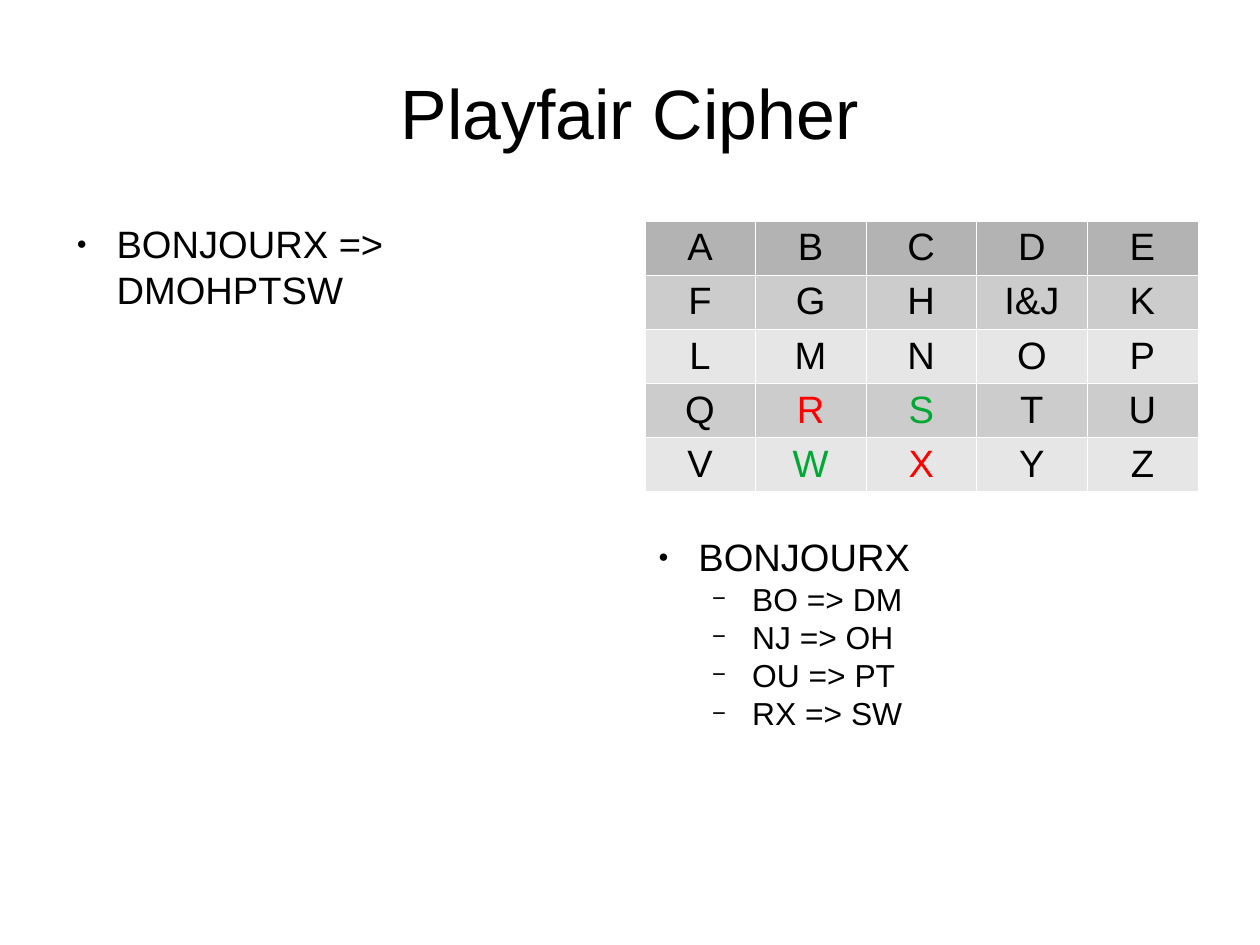
from dataclasses import dataclass

from lxml.etree import SubElement
from pptx import Presentation
from pptx.dml.color import RGBColor
from pptx.enum.text import MSO_ANCHOR as Anchor, MSO_AUTO_SIZE as AutoSize, PP_ALIGN as Align
from pptx.oxml.ns import qn
from pptx.util import Inches, Pt

FONT = "Arial"
BLACK, WHITE, RED, GREEN = "000000", "FFFFFF", "FF0000", "00A933"
HEADER_FILL, ODD_FILL, EVEN_FILL = "B3B3B3", "CCCCCC", "E6E6E6"
# The page is 28 by 21 centimetres
PAGE_WIDTH, PAGE_HEIGHT = 28 / 2.54, 21 / 2.54
LEFT, RIGHT, TOP, COLUMN_WIDTH = 0.55, 5.64, 1.93, 4.84
TABLE_HEIGHT, BORDER_WIDTH = 2.37, 0.06

KEY_SQUARE = [
    ["A", "B", "C", "D", "E"],
    ["F", "G", "H", "I&J", "K"],
    ["L", "M", "N", "O", "P"],
    ["Q", "R", "S", "T", "U"],
    ["V", "W", "X", "Y", "Z"],
]
LETTER_COLORS = {"R": RED, "X": RED, "S": GREEN, "W": GREEN}


@dataclass(frozen=True)
class Level:
    size: float
    margin: float
    space_before: float
    bullet: str
    bullet_percent: int


@dataclass(frozen=True)
class Item:
    text: str
    level: int = 0


LEVELS = [Level(24, 0.47, 14.2, "●", 45), Level(20, 0.94, 0, "−", 75)]


def color(value: str) -> RGBColor:
    return RGBColor.from_string(value)


def style(para, size: float, text_color: str = BLACK) -> None:
    para.font.name = FONT
    para.font.size = Pt(size)
    para.font.color.rgb = color(text_color)


def place(box, left: float, top: float, width: float, height: float) -> None:
    box.left, box.top = Inches(left), Inches(top)
    box.width, box.height = Inches(width), Inches(height)
    frame = box.text_frame
    frame.margin_left = frame.margin_right = frame.margin_top = frame.margin_bottom = 0
    frame.word_wrap = True
    frame.auto_size = AutoSize.NONE


def add_bullet(para, level: Level) -> None:
    props = para._p.get_or_add_pPr()
    props.set("marL", str(Inches(level.margin)))
    props.set("indent", str(Inches(-0.35)))
    bullet_color = SubElement(props, qn("a:buClr"))
    SubElement(bullet_color, qn("a:srgbClr"), val=BLACK)
    SubElement(props, qn("a:buSzPct"), val=str(level.bullet_percent * 1000))
    SubElement(props, qn("a:buFont"), typeface=FONT)
    SubElement(props, qn("a:buChar"), char=level.bullet)


def fill_list(box, items: list[Item]) -> None:
    frame = box.text_frame
    frame.vertical_anchor = Anchor.TOP
    for index, item in enumerate(items):
        para = frame.add_paragraph() if index else frame.paragraphs[0]
        level = LEVELS[item.level]
        para.text, para.level = item.text, item.level
        para.line_spacing = 1.0
        para.space_before = Pt(level.space_before)
        add_bullet(para, level)
        style(para, level.size)


def add_borders(cell) -> None:
    props = cell._tc.get_or_add_tcPr()
    for index, side in enumerate(("a:lnL", "a:lnR", "a:lnT", "a:lnB")):
        line = props.makeelement(qn(side), {"w": str(Pt(BORDER_WIDTH))})
        fill = SubElement(line, qn("a:solidFill"))
        SubElement(fill, qn("a:srgbClr"), val=WHITE)
        props.insert(index, line)


def add_key_square(page) -> None:
    count = len(KEY_SQUARE)
    table = page.shapes.add_table(
        count, count, Inches(RIGHT), Inches(TOP),
        Inches(COLUMN_WIDTH), Inches(TABLE_HEIGHT),
    ).table
    for row, letters in enumerate(KEY_SQUARE):
        row_fill = HEADER_FILL if row == 0 else ODD_FILL if row % 2 else EVEN_FILL
        for column, letter in enumerate(letters):
            cell = table.cell(row, column)
            cell.fill.solid()
            cell.fill.fore_color.rgb = color(row_fill)
            add_borders(cell)
            para = cell.text_frame.paragraphs[0]
            para.text, para.alignment = letter, Align.CENTER
            style(para, 24, LETTER_COLORS.get(letter, BLACK))
            para.font.bold = False


def main() -> None:
    deck = Presentation()
    deck.slide_width, deck.slide_height = Inches(PAGE_WIDTH), Inches(PAGE_HEIGHT)
    page = deck.slides.add_slide(deck.slide_layouts[3])
    title, message, steps = page.placeholders

    # Title
    place(title, LEFT, 0.33, 9.92, 1.38)
    title.text_frame.vertical_anchor = Anchor.MIDDLE
    heading = title.text_frame.paragraphs[0]
    heading.text, heading.alignment = "Playfair Cipher", Align.CENTER
    heading.line_spacing = 0.9
    style(heading, 44)

    # Message and its cipher text
    place(message, LEFT, TOP, COLUMN_WIDTH, 4.79)
    fill_list(message, [Item("BONJOURX => DMOHPTSW")])

    # Key square
    add_key_square(page)

    # Letter pairs
    place(steps, RIGHT, 4.67, COLUMN_WIDTH, 2.29)
    pairs = ["BO => DM", "NJ => OH", "OU => PT", "RX => SW"]
    fill_list(steps, [Item("BONJOURX")] + [Item(pair, 1) for pair in pairs])

    deck.save("out.pptx")


if __name__ == "__main__":
    main()
